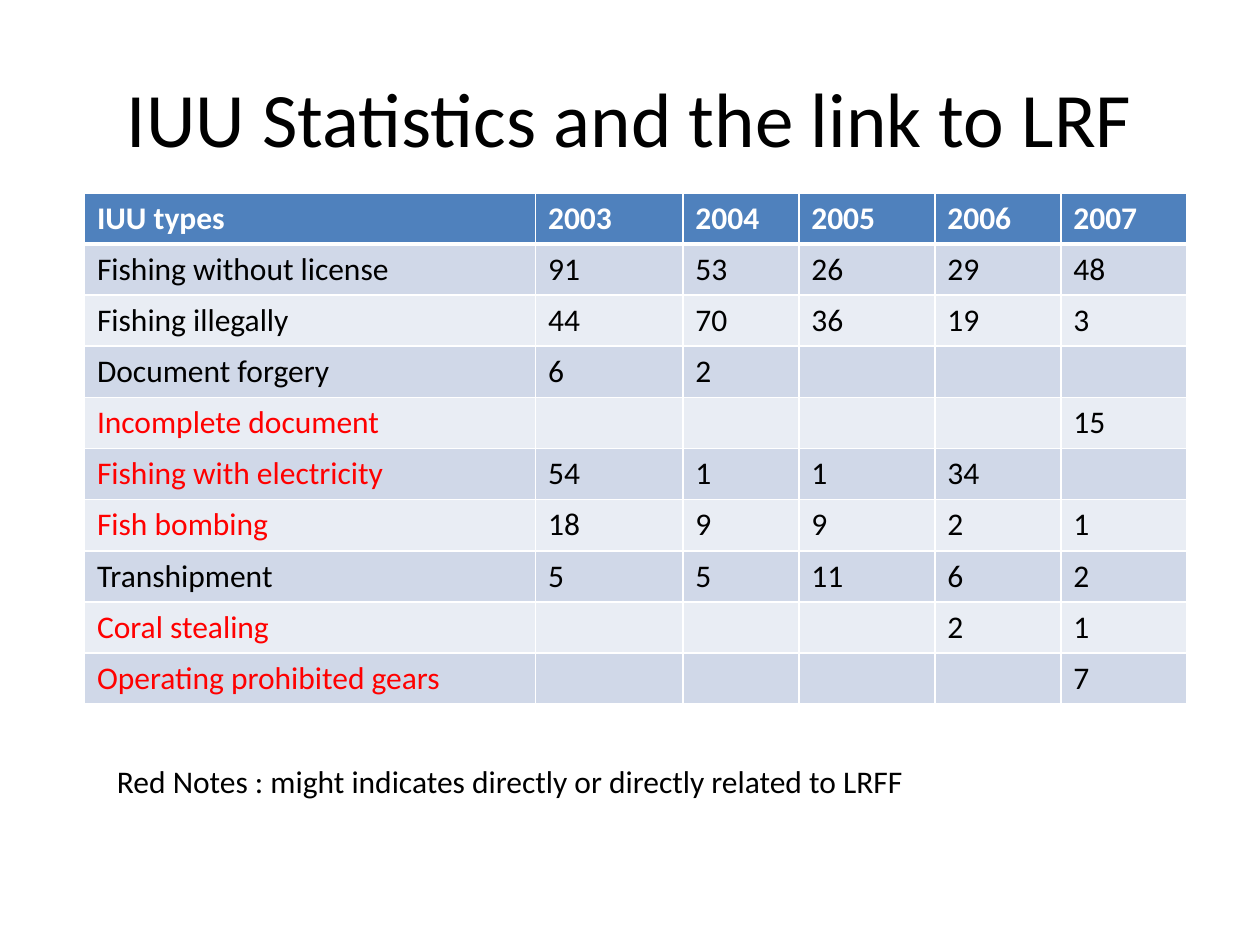
from dataclasses import dataclass

from lxml import etree
from pptx import Presentation
from pptx import util as u
from pptx.dml.color import RGBColor
from pptx.enum import text
from pptx.oxml.ns import qn


@dataclass(frozen=True)
class Theme:
    font: str = "Calibri"
    title: int = 44
    body: int = 18
    ink: str = "000000"
    alert: str = "FF0000"
    light: str = "FFFFFF"
    head: str = "4F81BD"
    bands: tuple = ("D0D8E8", "E9EDF4")
    thin: int = 1
    thick: int = 3


YEARS = ["2003", "2004", "2005", "2006", "2007"]
# type of fishing offence, linked to LRFF, count per year
CASES = [
    ("Fishing without license", False, [91, 53, 26, 29, 48]),
    ("Fishing illegally", False, [44, 70, 36, 19, 3]),
    ("Document forgery", False, [6, 2, "", "", ""]),
    ("Incomplete document", True, ["", "", "", "", 15]),
    ("Fishing with electricity", True, [54, 1, 1, 34, ""]),
    ("Fish bombing", True, [18, 9, 9, 2, 1]),
    ("Transhipment", False, [5, 5, 11, 6, 2]),
    ("Coral stealing", True, ["", "", "", 2, 1]),
    ("Operating prohibited gears", True, ["", "", "", "", 7]),
]
WIDTHS = [3.58, 1.17, 0.92, 1.08, 1, 1]
ROW = 0.406


class Deck:
    def __init__(self, theme):
        self.theme = theme
        self.prs = Presentation()
        self.prs.slide_width = u.Inches(10)
        self.prs.slide_height = u.Inches(7.5)
        self.slide = self.prs.slides.add_slide(self.prs.slide_layouts[6])

    def run(self, para, words, size, color, bold=False):
        run = para.add_run()
        run.text = words
        font = run.font
        font.name, font.size, font.bold = self.theme.font, u.Pt(size), bold
        font.color.rgb = RGBColor.from_string(color)

    def label(self, words, box, size, wrap=True, align=text.PP_ALIGN.LEFT,
              anchor=text.MSO_ANCHOR.TOP):
        frame = self.slide.shapes.add_textbox(*map(u.Inches, box)).text_frame
        frame.word_wrap = wrap
        frame.vertical_anchor = anchor
        para = frame.paragraphs[0]
        para.alignment = align
        self.run(para, words, size, self.theme.ink)

    def edge(self, cell, side, width):
        line = etree.SubElement(cell._tc.get_or_add_tcPr(), qn(f"a:ln{side}"),
                                w=str(u.Pt(width)))
        fill = etree.SubElement(line, qn("a:solidFill"))
        etree.SubElement(fill, qn("a:srgbClr"), val=self.theme.light)

    def cell(self, cell, words, fill, color, bold=False, top=1, base=1):
        thin = self.theme.thin
        for side, width in zip("LRTB", (thin, thin, top, base)):
            self.edge(cell, side, width)
        cell.fill.solid()
        cell.fill.fore_color.rgb = RGBColor.from_string(fill)
        if words:
            self.run(cell.text_frame.paragraphs[0], words, self.theme.body,
                     color, bold)

    def table(self, left, top):
        look = self.theme
        count = len(CASES) + 1
        grid = self.slide.shapes.add_table(
            count, len(WIDTHS), u.Inches(left), u.Inches(top),
            u.Inches(sum(WIDTHS)), u.Inches(ROW * count)).table
        for col, width in zip(grid.columns, WIDTHS):
            col.width = u.Inches(width)
        for row in grid.rows:
            row.height = u.Inches(ROW)

        for col, words in enumerate(["IUU types", *YEARS]):
            self.cell(grid.cell(0, col), words, look.head, look.light,
                      bold=True, base=look.thick)
        for row, (name, linked, counts) in enumerate(CASES, 1):
            band = look.bands[(row - 1) % 2]
            rule = look.thick if row == 1 else look.thin
            for col, value in enumerate([name, *counts]):
                color = look.alert if linked and col == 0 else look.ink
                self.cell(grid.cell(row, col), str(value), band, color,
                          top=rule)


def main():
    look = Theme()
    deck = Deck(look)
    deck.label("IUU Statistics and the link to LRF", (0.5, 0.3, 9, 1.25),
               look.title, align=text.PP_ALIGN.CENTER,
               anchor=text.MSO_ANCHOR.MIDDLE)
    deck.table(0.67, 1.53)
    deck.label("Red Notes : might indicates directly or directly related to LRFF",
               (0.83, 6, 6.52, 0.4), look.body, wrap=False)
    deck.prs.save("out.pptx")


if __name__ == "__main__":
    main()
